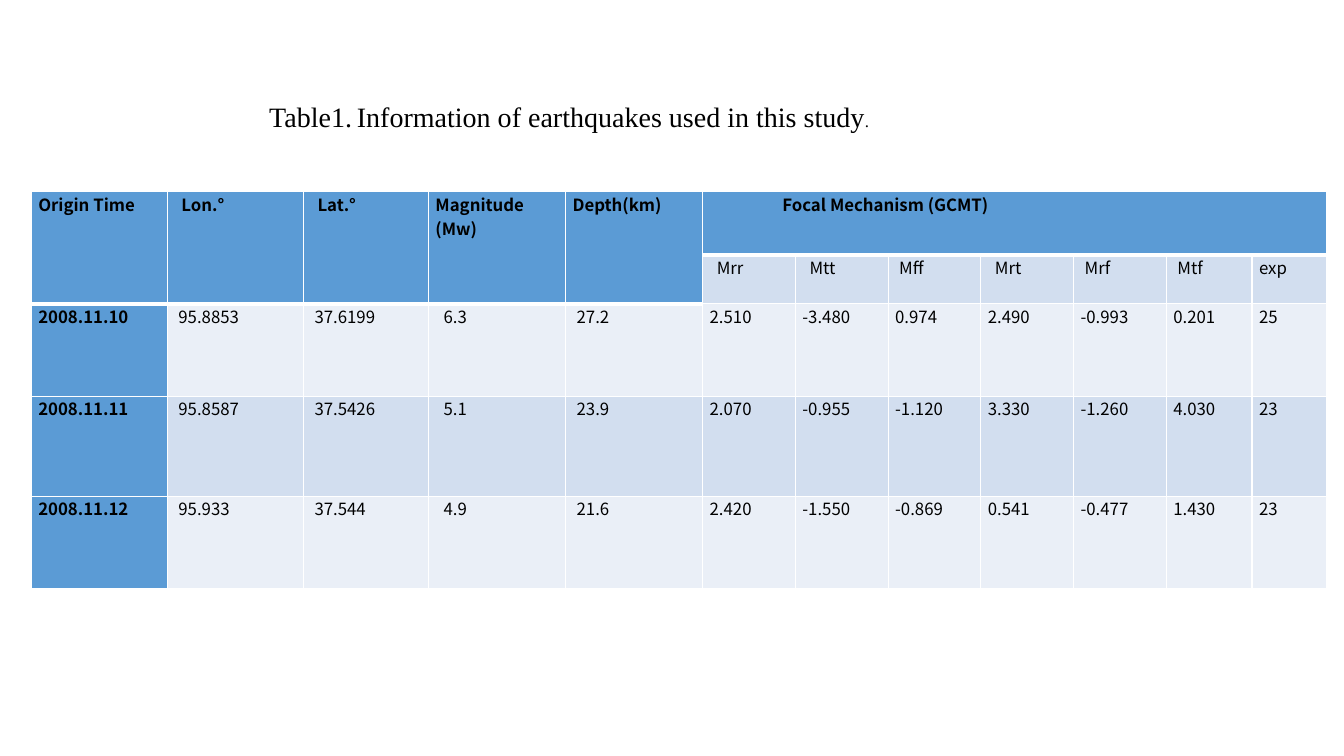
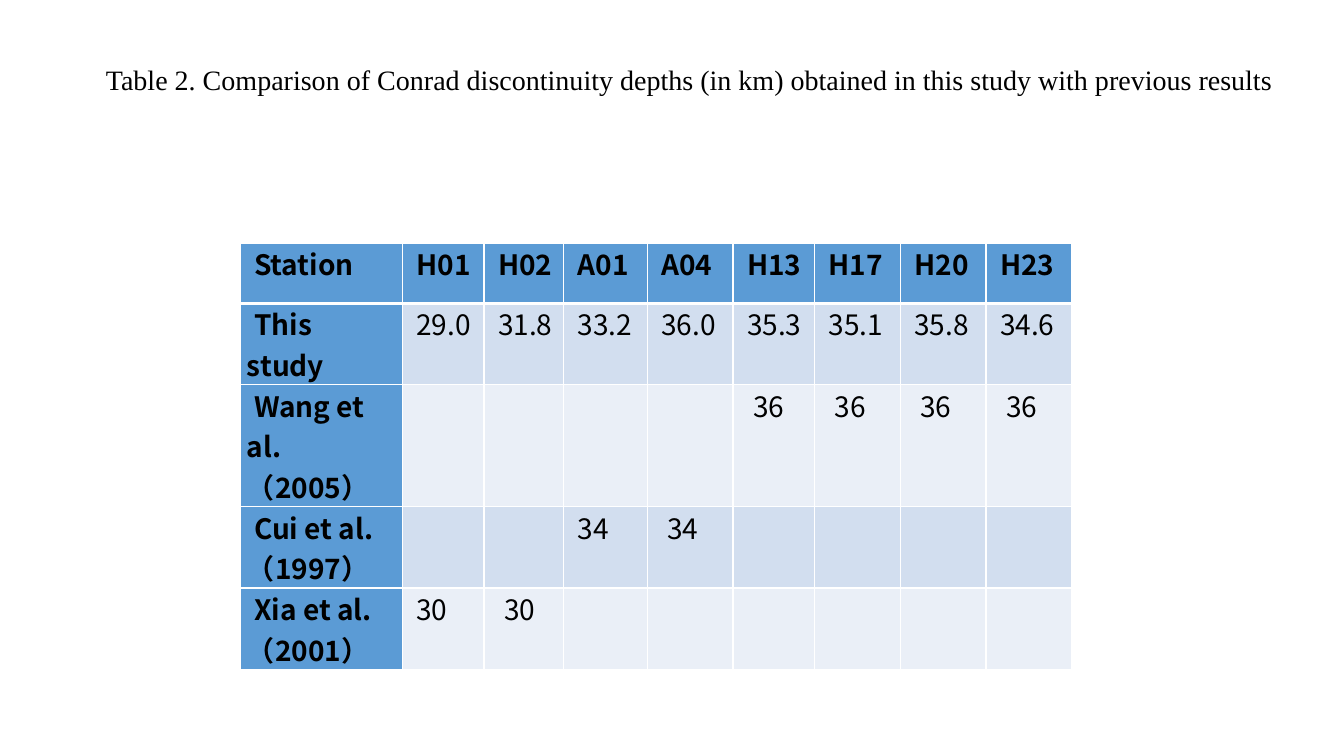
from lxml import etree
from pptx import Presentation
from pptx.dml.color import RGBColor
from pptx.enum.text import MSO_ANCHOR, MSO_AUTO_SIZE, PP_ALIGN
from pptx.oxml.ns import qn
from pptx.util import Inches, Pt

LEFT, MIDDLE, NO_FIT = PP_ALIGN.LEFT, MSO_ANCHOR.MIDDLE, MSO_AUTO_SIZE.NONE
BLUE, PALE, PALER = "5B9BD5", "D2DEEF", "EAEFF7"
BLACK, WHITE = "000000", "FFFFFF"
TITLE_FONT, TABLE_FONT = "Times New Roman", "Noto Sans CJK SC"


def color(value):
    return RGBColor.from_string(value)


def add_border(cell, side, width):
    tcPr = cell._tc.get_or_add_tcPr()
    ln = etree.Element(qn("a:ln" + side), w=str(Pt(width)))
    fill = etree.SubElement(ln, qn("a:solidFill"))
    etree.SubElement(fill, qn("a:srgbClr"), val=WHITE)
    tcPr.insert("LRTB".index(side), ln)


# Slide contents: merges are (row, column, last row, last column),
# indents give the first-line indent of every cell, in inches
quake_indents = [0, 0.04, 0.04, 0.08, 0.04] + [0] * 7
station_indents = [0.07] * 9
slides = [
    dict(
        title=[("Table1.", 20, TITLE_FONT), (" ", 14, "Karla"),
               ("Information of earthquakes used in this study", 20, TITLE_FONT),
               (".", 12, TITLE_FONT)],
        title_box=(2.52, 0.93, 10.5, 0.44), title_indent=0.05,
        table_at=(0.31, 1.9), size=12,
        cols=[1.35, 1.35, 1.24, 1.36, 1.36] + [0.92] * 5 + [0.85, 0.74],
        heights=[0.63, 0.48, 0.92, 0.99, 0.92],
        merges=[(0, c, 1, c) for c in range(5)] + [(0, 5, 0, 11)],
        rows=[
            ["Origin Time", "Lon.°", "Lat.°", "Magnitude (Mw)", "Depth(km)",
             "Focal Mechanism (GCMT)"] + [""] * 6,
            [""] * 5 + ["Mrr", "Mtt", "Mff", "Mrt", "Mrf", "Mtf", "exp"],
            ["2008.11.10", "95.8853", "37.6199", "6.3", "27.2", "2.510",
             "-3.480", "0.974", "2.490", "-0.993", "0.201", "25"],
            ["2008.11.11", "95.8587", "37.5426", "5.1", "23.9", "2.070",
             "-0.955", "-1.120", "3.330", "-1.260", "4.030", "23"],
            ["2008.11.12", "95.933", "37.544", "4.9", "21.6", "2.420",
             "-1.550", "-0.869", "0.541", "-0.477", "1.430", "23"],
        ],
        indents=[[0, 0.07, 0.07, 0, 0, 0.72] + [0] * 6,
                 [0] * 5 + [0.07, 0.07, 0.04, 0.07, 0.04, 0.04, 0]]
        + [quake_indents] * 3,
    ),
    dict(
        title=[("Table 2. Comparison of Conrad discontinuity depths (in km) "
                "obtained in this study with previous results", 20, TITLE_FONT)],
        title_box=(0.88, 0.57, 12.2, 0.44), title_indent=0.07,
        table_at=(2.38, 2.41), size=20,
        cols=[1.61, 0.81, 0.79, 0.83, 0.85, 0.81, 0.85, 0.85, 0.85],
        heights=[0.6] + [0.61] * 4,
        merges=[],
        rows=[
            ["Station", "H01", "H02", "A01", "A04", "H13", "H17", "H20", "H23"],
            ["This study", "29.0", "31.8", "33.2", "36.0",
             "35.3", "35.1", "35.8", "34.6"],
            ["Wang et al.（2005）"] + [""] * 4 + ["36"] * 4,
            ["Cui et al.（1997）", "", "", "34", "34"] + [""] * 4,
            ["Xia et al.（2001）", "30", "30"] + [""] * 6,
        ],
        indents=[station_indents, station_indents,
                 [0.07] * 5 + [0.13] * 4,
                 [0.07] * 4 + [0.13] * 5,
                 [0.07] * 2 + [0.13] * 7],
    ),
]

prs = Presentation()
prs.slide_width, prs.slide_height = Inches(13.33), Inches(7.5)

for data in slides:
    s = prs.slides.add_slide(prs.slide_layouts[5])

    # Title
    title = s.shapes.title
    title.left, title.top, title.width, title.height = map(Inches, data["title_box"])
    tf = title.text_frame
    tf.word_wrap, tf.auto_size, tf.vertical_anchor = True, NO_FIT, MIDDLE
    p = tf.paragraphs[0]
    p.alignment = LEFT
    p._p.get_or_add_pPr().set("indent", str(Inches(data["title_indent"])))
    for text, size, font in data["title"]:
        r = p.add_run()
        r.text = text
        r.font.size, r.font.name = Pt(size), font
        r.font.color.rgb = color(BLACK)

    # Table grid
    cols, heights, rows = data["cols"], data["heights"], data["rows"]
    left, top = data["table_at"]
    table = s.shapes.add_table(len(rows), len(cols), Inches(left), Inches(top),
                               Inches(sum(cols)), Inches(sum(heights))).table
    for col, width in zip(table.columns, cols):
        col.width = Inches(width)
    for row, height in zip(table.rows, heights):
        row.height = Inches(height)
    for r1, c1, r2, c2 in data["merges"]:
        table.cell(r1, c1).merge(table.cell(r2, c2))

    # Cells: blue header and first column, banded body, white grid
    for i, row in enumerate(rows):
        for j, text in enumerate(row):
            cell = table.cell(i, j)
            header = i == 0 or cell.is_spanned
            below_header = i > 0 and (i == 1 or table.cell(i - 1, j).is_spanned)
            strong = header or j == 0
            cell.margin_left = cell.margin_right = Inches(0.07)
            cell.margin_top = cell.margin_bottom = 0
            cell.fill.solid()
            cell.fill.fore_color.rgb = color(
                BLUE if strong else PALE if i % 2 else PALER)
            for side, width in (("L", 1), ("R", 1), ("T", 3 if below_header else 1),
                                ("B", 3 if header else 1)):
                add_border(cell, side, width)
            if not text:
                continue
            p = cell.text_frame.paragraphs[0]
            p._p.get_or_add_pPr().set("indent", str(Inches(data["indents"][i][j])))
            r = p.add_run()
            r.text = text
            p.font.size, p.font.name, p.font.bold = Pt(data["size"]), TABLE_FONT, strong
            p.font.color.rgb = color(BLACK)
            # East Asian face for the full-width brackets
            r.font.name, r.font.size, r.font.bold = TABLE_FONT, Pt(data["size"]), strong
            r.font.color.rgb = color(BLACK)
            etree.SubElement(r._r.get_or_add_rPr(), qn("a:ea"), typeface=TABLE_FONT)

prs.save("out.pptx")
